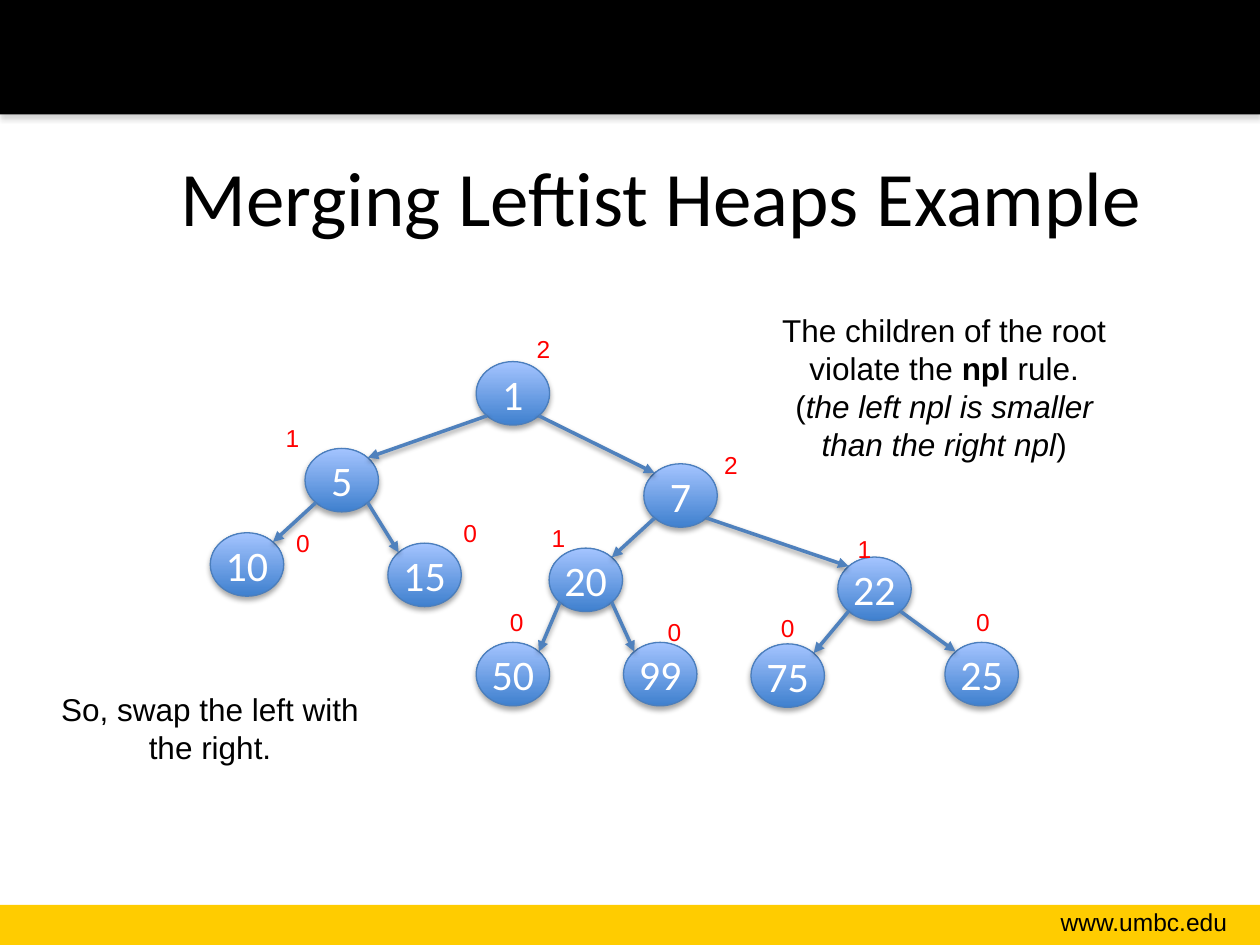
from dataclasses import dataclass

from lxml.etree import SubElement
from pptx import Presentation
from pptx.dml.color import RGBColor
from pptx.enum.shapes import MSO_CONNECTOR, MSO_SHAPE
from pptx.enum.text import MSO_ANCHOR as Anchor, PP_ALIGN as Align
from pptx.oxml.ns import qn
from pptx.util import Cm, Pt

NODE_WIDTH, NODE_HEIGHT = 1.48, 1.28
NEAR, FAR = 0.146, 0.854


@dataclass
class Node:
    """A heap node: its corner, npl value, npl corner and children, in cm."""
    left: float
    top: float
    npl: str
    npl_left: float
    npl_top: float
    children: tuple = ()


HEAP = {
    "1": Node(9.6, 7.29, "2", 10.57, 6.6, ("5", "7")),
    "5": Node(6.15, 9.04, "1", 5.51, 8.41, ("10", "15")),
    "7": Node(12.98, 9.35, "2", 14.35, 8.94, ("20", "22")),
    "10": Node(4.24, 10.74, "0", 5.72, 10.52),
    "15": Node(7.82, 10.95, "0", 9.09, 10.31),
    "20": Node(11.07, 11.05, "1", 10.87, 10.41, ("50", "99")),
    "22": Node(16.89, 11.23, "1", 17.04, 10.64, ("75", "25")),
    "50": Node(9.6, 12.95, "0", 10.03, 12.12),
    "99": Node(12.57, 12.95, "0", 13.21, 12.32),
    "75": Node(15.14, 12.98, "0", 15.49, 12.24),
    "25": Node(19.05, 12.95, "0", 19.43, 12.12),
}


def color(value):
    """Return the colour of a hex string."""
    return RGBColor.from_string(value)


def style(para, size, shade, align, face="Arial"):
    """Set the font and alignment of a paragraph."""
    para.alignment = align
    para.font.name = face
    para.font.size = Pt(size)
    para.font.color.rgb = color(shade)


def add_shadow(shape, shade, alpha, distance):
    """Give a shape or connector a soft shadow that falls downwards."""
    effects = SubElement(shape._element.spPr, qn("a:effectLst"))
    outer = SubElement(effects, qn("a:outerShdw"), blurRad=str(Pt(3.1)),
                       dist=str(Pt(distance)), dir="5400000", rotWithShape="0")
    tone = SubElement(outer, qn("a:srgbClr"), val=shade)
    SubElement(tone, qn("a:alpha"), val=str(alpha * 1000))


def add_band(page, top, height, shade):
    """Add a full-width band without an outline."""
    band = page.shapes.add_shape(MSO_SHAPE.RECTANGLE, 0, Cm(top), Cm(25.4), Cm(height))
    band.fill.solid()
    band.fill.fore_color.rgb = color(shade)
    band.line.fill.background()
    return band


def add_text(page, left, top, width, height, spans, size, shade="000000", align=Align.CENTER):
    """Add a text box of one paragraph made of (text, bold, italic) spans."""
    box = page.shapes.add_textbox(Cm(left), Cm(top), Cm(width), Cm(height))
    box.text_frame.word_wrap = True
    para = box.text_frame.paragraphs[0]
    style(para, size, shade, align)
    for text, bold, italic in spans:
        span = para.add_run()
        span.text = text
        span.font.bold = bold
        span.font.italic = italic


def add_node(page, key, node):
    """Add the ellipse of a node with its key."""
    oval = page.shapes.add_shape(MSO_SHAPE.OVAL, Cm(node.left), Cm(node.top),
                                 Cm(NODE_WIDTH), Cm(NODE_HEIGHT))
    oval.fill.gradient()
    oval.fill.gradient_angle = 90
    for stop, shade in zip(oval.fill.gradient_stops, ("3F80CE", "A4C4FF")):
        stop.color.rgb = color(shade)
    oval.line.color.rgb = color("4B7EBC")
    oval.line.width = Pt(0.75)
    add_shadow(oval, "000000", 35, 1.8)
    frame = oval.text_frame
    frame.word_wrap = False
    frame.vertical_anchor = Anchor.MIDDLE
    frame.text = key
    style(frame.paragraphs[0], 24, "FFFFFF", Align.CENTER, "Calibri")


def add_edge(page, parent, child):
    """Add an arrow from a lower corner of a parent to an upper corner of a child."""
    start, end = (NEAR, FAR) if child.left < parent.left else (FAR, NEAR)
    edge = page.shapes.add_connector(
        MSO_CONNECTOR.STRAIGHT,
        Cm(parent.left + start * NODE_WIDTH), Cm(parent.top + FAR * NODE_HEIGHT),
        Cm(child.left + end * NODE_WIDTH), Cm(child.top + NEAR * NODE_HEIGHT))
    edge.line.color.rgb = color("4F81BD")
    edge.line.width = Pt(2)
    SubElement(edge.line._get_or_add_ln(), qn("a:tailEnd"), type="triangle")
    add_shadow(edge, "000000", 38, 1.6)


def add_title(page, text):
    """Place and format the title placeholder."""
    title = page.shapes.title
    title.left, title.top, title.width, title.height = Cm(1.9), Cm(2.36), Cm(22.86), Cm(3.18)
    title.text_frame.text = text
    title.text_frame.vertical_anchor = Anchor.MIDDLE
    style(title.text_frame.paragraphs[0], 44, "000000", Align.CENTER, "Calibri")


def add_heap(page):
    """Draw the nodes, edges and npl values of the heap."""
    for key, node in HEAP.items():
        add_node(page, key, node)
    for node in HEAP.values():
        for child in node.children:
            add_edge(page, node, HEAP[child])
        add_text(page, node.npl_left, node.npl_top, 0.74, 0.86,
                 [(node.npl, None, None)], 14, "FF0000", Align.LEFT)


def main():
    """Build the slide and save it."""
    deck = Presentation()
    deck.slide_width, deck.slide_height = Cm(25.4), Cm(19.05)
    page = deck.slides.add_slide(deck.slide_layouts[5])
    add_band(page, 18.24, 0.81, "FFCC00").shadow.inherit = False
    add_shadow(add_band(page, 0, 2.31, "000000"), "808080", 35, 1.8)
    add_text(page, 19.94, 18.16, 5.05, 0.86, [("www.umbc.edu", None, None)], 14,
             align=Align.RIGHT)
    add_title(page, "Merging Leftist Heaps Example")
    add_heap(page)
    add_text(page, 15.44, 6.15, 7.19, 3.33, [
        ("The children of the root violate the ", None, None),
        ("npl", True, None),
        (" rule. (", None, None),
        ("the left npl is smaller than the right npl", None, True),
        (")", None, None),
    ], 18)
    add_text(page, 0.64, 13.79, 7.19, 1.8,
             [("So, swap the left with the right.", None, None)], 18)
    deck.save("out.pptx")


if __name__ == "__main__":
    main()
